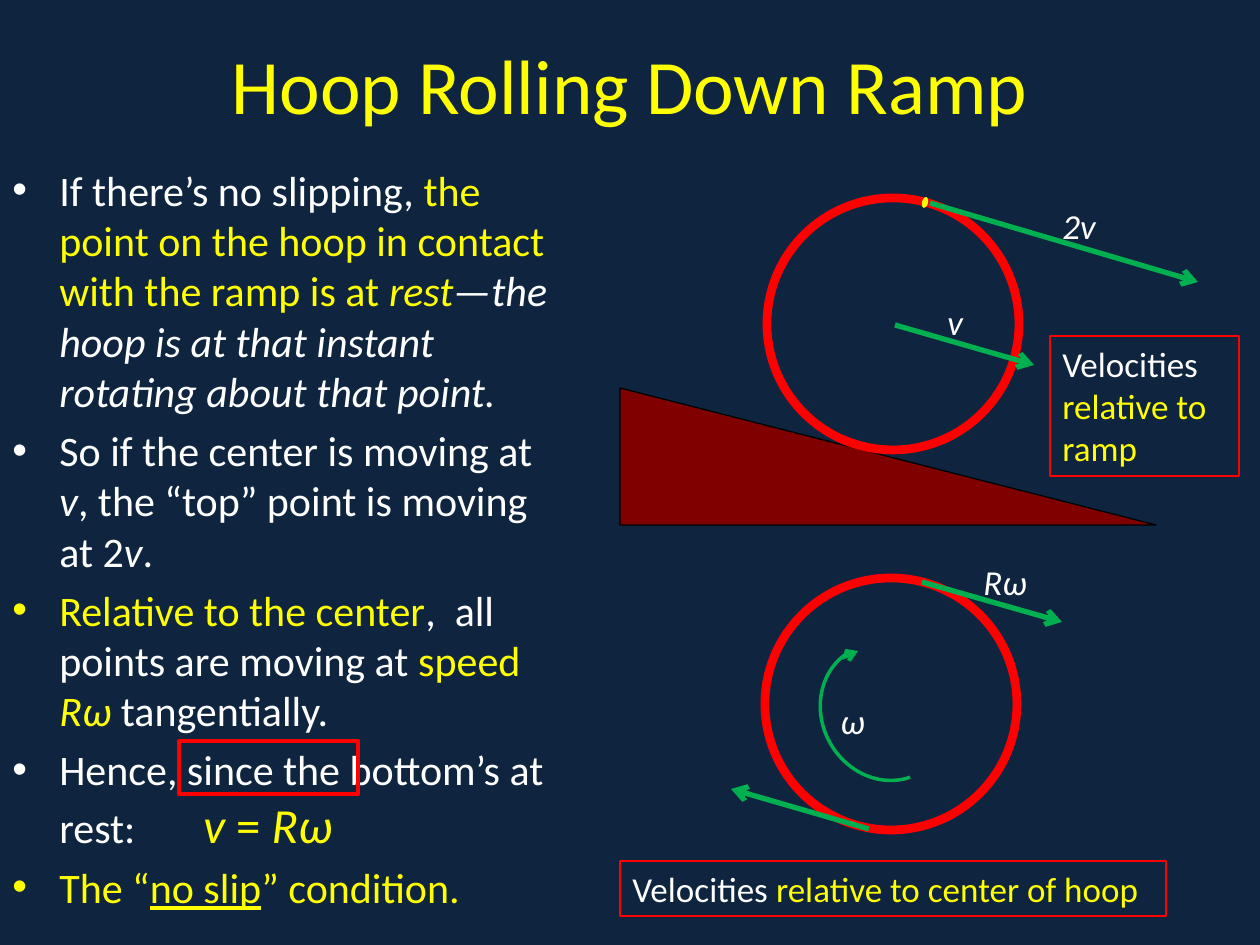
import pptx
import pptx.util
import pptx.dml.color
import pptx.enum.shapes
import pptx.enum.text
import pptx.oxml
import pptx.oxml.ns
from dataclasses import dataclass

SHAPE = pptx.enum.shapes.MSO_SHAPE
ALIGN = pptx.enum.text.PP_ALIGN
ANCHOR = pptx.enum.text.MSO_ANCHOR
PX = pptx.util.Inches(1) / 126


@dataclass(frozen=True)
class Theme:
    font: str = "Calibri"
    background: str = "0F243E"
    white: str = "FFFFFF"
    yellow: str = "FFFF00"
    red: str = "FF0000"
    green: str = "00B050"
    ramp: str = "800000"
    black: str = "000000"
    title: int = 44
    formula: int = 28
    body: int = 24
    label: int = 20


def emu(*lengths):
    return [round(length * PX) for length in lengths]


def color(value):
    return pptx.dml.color.RGBColor.from_string(value)


def add_xml(parent, tag, **attributes):
    element = pptx.oxml.parse_xml(f"<a:{tag} {pptx.oxml.ns.nsdecls('a')}/>")
    for name, value in attributes.items():
        element.set(name, str(value))
    parent.append(element)
    return element


class SlideBuilder:
    def __init__(self, slide, theme):
        self.slide, self.theme = slide, theme
        self.shapes = slide.shapes
        slide.background.fill.solid()
        slide.background.fill.fore_color.rgb = color(theme.background)

    def start_group(self):
        self.shapes = self.slide.shapes.add_group_shape().shapes

    def end_group(self):
        self.shapes = self.slide.shapes

    def outline(self, shape, line, width):
        shape.line.color.rgb = color(line)
        shape.line.width = pptx.util.Pt(width)

    def shape(self, kind, box, fill=None, line=None, width=1, rotation=0):
        shape = self.shapes.add_shape(kind, *emu(*box))
        shape.shadow.inherit = False
        shape.rotation = rotation
        if fill:
            shape.fill.solid()
            shape.fill.fore_color.rgb = color(fill)
        else:
            shape.fill.background()
        if line:
            self.outline(shape, line, width)
        else:
            shape.line.fill.background()
        return shape

    def arrow(self, start, end, width=3):
        connector = self.shapes.add_connector(
            pptx.enum.shapes.MSO_CONNECTOR.STRAIGHT, *emu(*start, *end))
        self.outline(connector, self.theme.green, width)
        add_xml(connector.line._get_or_add_ln(), "tailEnd", type="arrow")
        add_xml(connector._element.spPr, "effectLst")

    def runs(self, paragraph, runs, size):
        """Each run is (text, colour), then optionally its style letters and size."""
        for text, run_color, *extra in runs:
            style = extra[0] if extra else ""
            run = paragraph.add_run()
            run.text = text
            run.font.name = self.theme.font
            run.font.size = pptx.util.Pt(extra[1] if len(extra) > 1 else size)
            run.font.color.rgb = color(run_color)
            run.font.italic = "i" in style
            run.font.underline = "u" in style

    def text(self, box, runs, size, align=ALIGN.LEFT, anchor=ANCHOR.TOP, border=None):
        textbox = self.shapes.add_textbox(*emu(*box))
        frame = textbox.text_frame
        frame.word_wrap = True
        frame.vertical_anchor = anchor
        frame.paragraphs[0].alignment = align
        self.runs(frame.paragraphs[0], runs, size)
        if border:
            self.outline(textbox, border, 1.5)
        return textbox

    def label(self, text, left, top, width=63):
        self.text((left, top, width, 55), [(text, self.theme.white, "i")], self.theme.label)

    def bullets(self, box, items, size, indent, tab):
        textbox = self.shapes.add_textbox(*emu(*box))
        frame = textbox.text_frame
        frame.word_wrap = True
        for index, runs in enumerate(items):
            paragraph = frame.paragraphs[0] if index == 0 else frame.add_paragraph()
            paragraph.space_before = pptx.util.Pt(size * 0.2)
            self.runs(paragraph, runs, size)
            properties = paragraph._p.get_or_add_pPr()
            margin, stop = emu(indent, tab)
            properties.set("marL", str(margin))
            properties.set("indent", str(-margin))
            add_xml(properties, "buFont", typeface="Arial")
            add_xml(properties, "buChar", char="•")
            add_xml(add_xml(properties, "tabLst"), "tab", pos=stop, algn="l")

    def hoop(self, left, top):
        self.shape(SHAPE.OVAL, (left, top, 252, 252), line=self.theme.red, width=5)


def main():
    presentation = pptx.Presentation()
    presentation.slide_width, presentation.slide_height = emu(1260, 945)
    theme = Theme()
    white, yellow, red = theme.white, theme.yellow, theme.red
    builder = SlideBuilder(
        presentation.slides.add_slide(presentation.slide_layouts[6]), theme)

    # Title and explanation
    builder.text((63, 0, 1134, 168), [("Hoop Rolling Down Ramp", yellow)],
                 theme.title, ALIGN.CENTER, ANCHOR.MIDDLE)
    builder.bullets((0, 158, 577, 766), [
        [("If there’s no slipping, ", white),
         ("the point on the hoop in contact with the ramp is at ", yellow),
         ("rest", yellow, "i"),
         ("—the hoop is at that instant rotating about that point.", white, "i")],
        [("So if the center is moving at ", white), ("v", white, "i"),
         (", the “top” point is moving at 2", white), ("v", white, "i"), (".", white)],
        [("Relative to the center", yellow), (",  all points are moving at ", white),
         ("speed ", yellow), ("Rω", yellow, "i"), (" tangentially.", white)],
        [("Hence, since the bottom’s at rest:\t", white),
         ("v", yellow, "i", theme.formula), (" = ", yellow, "", theme.formula),
         ("Rω", yellow, "i", theme.formula)],
        [("The “", yellow), ("no slip", yellow, "u"), ("” condition.", yellow)],
    ], theme.body, indent=47, tab=191)

    # Hoop on the ramp: velocities relative to the ramp
    builder.shape(SHAPE.RIGHT_TRIANGLE, (620, 388, 536, 137), theme.ramp, theme.black, 0.75)
    builder.hoop(767, 198)
    builder.arrow((930, 203), (1198, 282))
    builder.arrow((895, 325), (1034, 365))
    builder.text((1050, 336, 189, 140),
                 [("Velocities ", white), ("relative to ramp", yellow)],
                 theme.label, border=red)
    builder.text((620, 861, 546, 55),
                 [("Velocities ", white), ("relative to center of hoop", yellow)],
                 theme.label, border=red)

    # Spinning hoop: velocities relative to its center
    builder.start_group()
    builder.hoop(765, 578)
    builder.arrow((922, 582), (1062, 622))
    builder.arrow((869, 829), (731, 789))
    arc = builder.shape(SHAPE.ARC, (815, 649, 140, 126), line=theme.green,
                        width=2, rotation=240.6)
    arc.adjustments[0], arc.adjustments[1] = 112.95, 0
    builder.arrow((842, 658), (858, 651), 2.25)
    builder.label("ω", 828, 693)
    builder.end_group()

    # Velocity labels, top point and formula frame
    builder.label("v", 935, 294)
    builder.label("2v", 1050, 198)
    builder.label("Rω", 971, 554, 84)
    builder.shape(SHAPE.OVAL, (922, 197, 6, 11), yellow, rotation=14)
    builder.shape(SHAPE.RECTANGLE, (179, 741, 179, 53), line=red, width=2.5)

    presentation.save("out.pptx")


if __name__ == "__main__":
    main()
